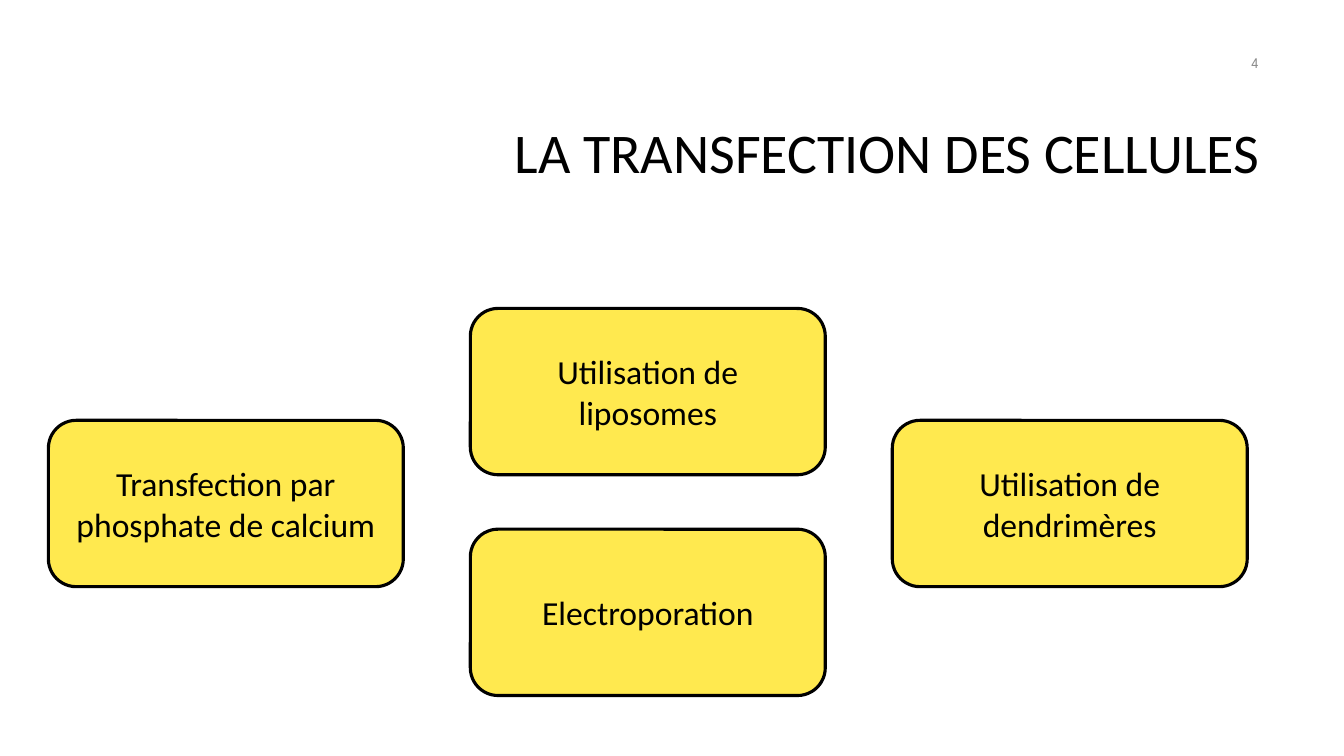
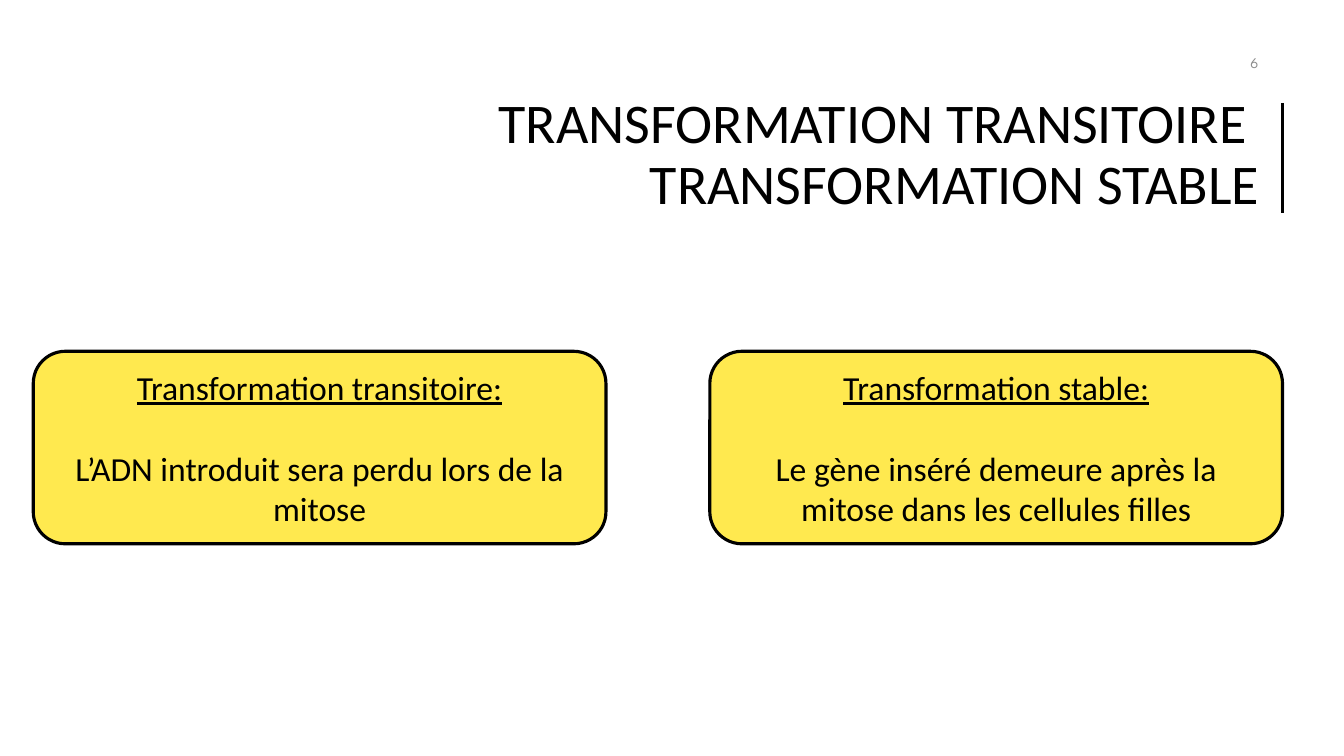
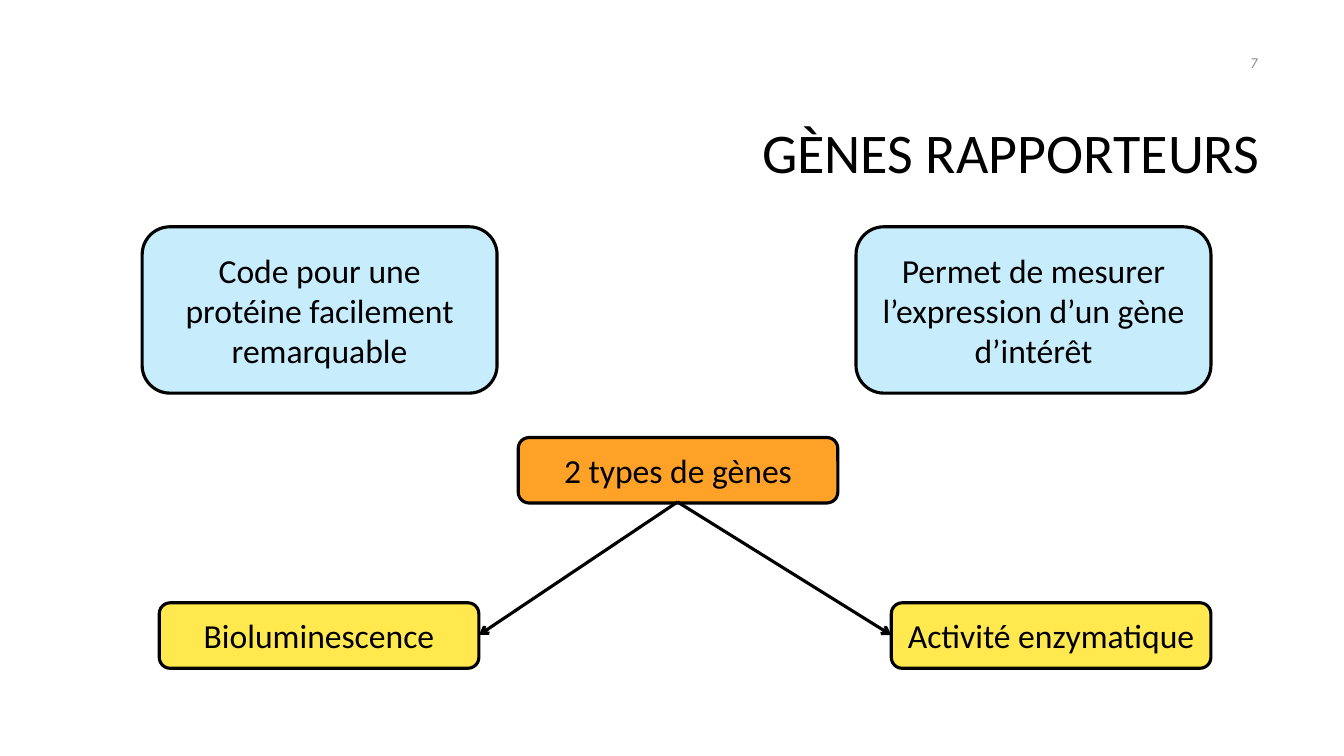
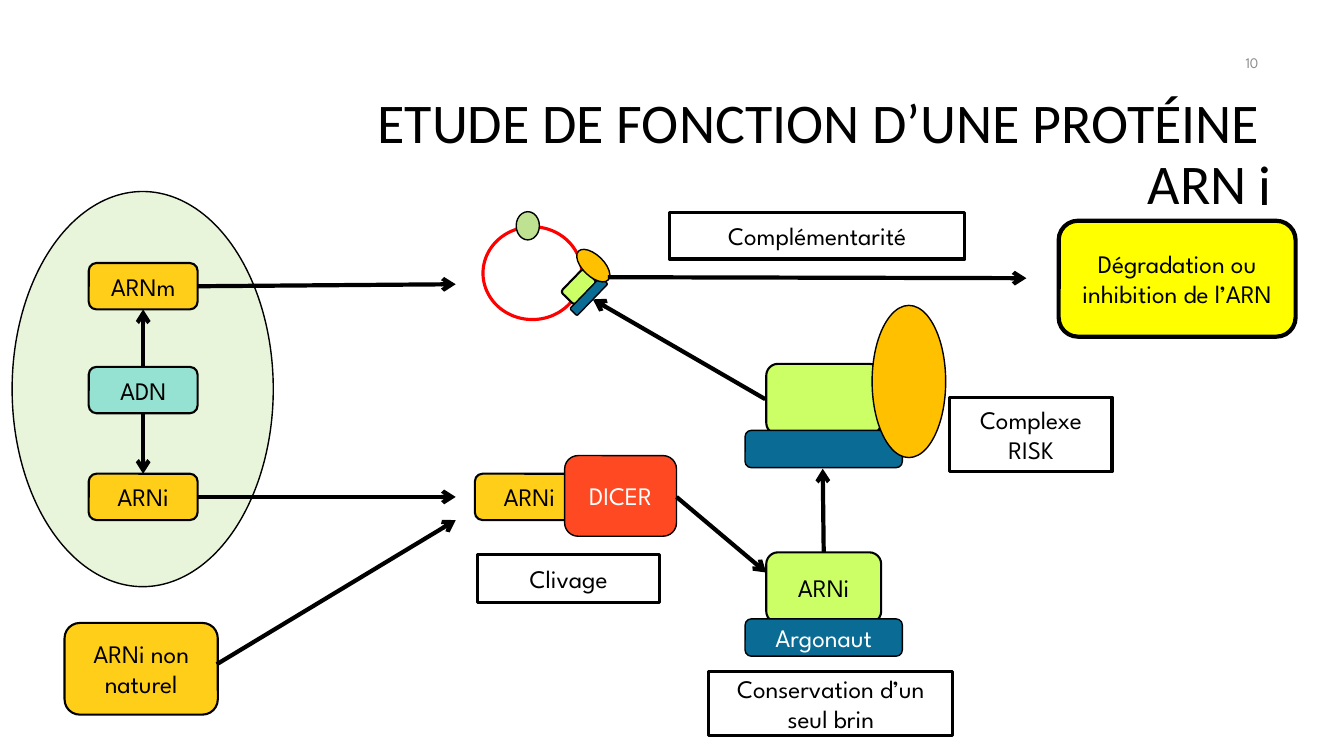
from lxml import etree
from pptx import Presentation
from pptx.dml.color import RGBColor
from pptx.enum.shapes import MSO_CONNECTOR, MSO_SHAPE
from pptx.enum.text import MSO_ANCHOR, MSO_AUTO_SIZE, PP_ALIGN
from pptx.oxml.ns import qn
from pptx.util import Inches, Pt

ROUNDED, RECTANGLE, OVAL = MSO_SHAPE.ROUNDED_RECTANGLE, MSO_SHAPE.RECTANGLE, MSO_SHAPE.OVAL
LEFT, CENTER, RIGHT = PP_ALIGN.LEFT, PP_ALIGN.CENTER, PP_ALIGN.RIGHT
TOP, MIDDLE = MSO_ANCHOR.TOP, MSO_ANCHOR.MIDDLE
STRAIGHT = MSO_CONNECTOR.STRAIGHT

# Grid of square cells: 133.3 columns by 75 rows
CELL = Inches(0.1)
COLUMNS, ROWS = 133.3, 75
TITLE_FRAME = (31.7, 8.4, 94.2, 14.1)
NUMBER_FRAME = (95.8, 4.2, 30, 4)

BODY_FONT, LABEL_FONT = "Calibri", "League Spartan"
COLORS = {
    "black": "000000", "white": "FFFFFF", "grey": "8C8C8C", "red": "FF0000",
    "yellow": "FFE94F", "sky": "C7ECFB", "orange": "FFA227",
    "nucleus": "E9F5DB", "leaf": "BEE292", "mint": "96E2D2", "gold": "FFCE19",
    "vermilion": "FF4922", "lime": "CCFF66", "blue": "0A6B94",
    "amber": "FFC000", "bright": "FFFF00",
}


def write_text(frame, text, font=BODY_FONT, size=24, color="black", align=CENTER,
               anchor=MIDDLE, spacing=None, gap=0, underline_first=False):
    """Write one paragraph per line of text."""
    frame.word_wrap = True
    frame.auto_size = MSO_AUTO_SIZE.NONE
    frame.vertical_anchor = anchor
    for index, line in enumerate(text.split("\n")):
        paragraph = frame.add_paragraph() if index else frame.paragraphs[0]
        paragraph.alignment = align
        if spacing:
            paragraph.line_spacing = spacing
        if index and gap:
            paragraph.space_before = Pt(gap)
        run = paragraph.add_run()
        run.text = line
        run.font.name = font
        run.font.size = Pt(size)
        run.font.color.rgb = RGBColor.from_string(COLORS[color])
        if underline_first and index == 0:
            run.font.underline = True


def add_box(slide, kind, frame, fill, text="", weight=2.25, outline="black",
            rotation=0, **text_format):
    """Add an outlined shape, with its frame given in cells."""
    shape = slide.shapes.add_shape(kind, *[int(value * CELL) for value in frame])
    shape.shadow.inherit = False
    shape.fill.solid()
    shape.fill.fore_color.rgb = RGBColor.from_string(COLORS[fill])
    shape.line.color.rgb = RGBColor.from_string(COLORS[outline])
    shape.line.width = Pt(weight)
    shape.rotation = rotation
    if text:
        write_text(shape.text_frame, text, **text_format)


presentation = Presentation()
presentation.slide_width = int(COLUMNS * CELL)
presentation.slide_height = int(ROWS * CELL)

# Titles and slide numbers
slides = []
for number, title in [
    ("4", "LA TRANSFECTION DES CELLULES"),
    ("6", "TRANSFORMATION TRANSITOIRE \nTRANSFORMATION STABLE"),
    ("7", "GÈNES RAPPORTEURS"),
    ("10", "ETUDE DE FONCTION D’UNE PROTÉINE\nARN "),
]:
    slide = presentation.slides.add_slide(presentation.slide_layouts[5])
    placeholder = slide.shapes.title
    placeholder.left, placeholder.top, placeholder.width, placeholder.height = [
        int(value * CELL) for value in TITLE_FRAME]
    write_text(placeholder.text_frame, title, size=40, align=RIGHT, spacing=0.9)
    number_box = slide.shapes.add_textbox(*[int(value * CELL) for value in NUMBER_FRAME])
    write_text(number_box.text_frame, number, font=LABEL_FONT, size=10.5,
               color="grey", align=RIGHT)
    slides.append(slide)
transfection, transformation, reporters, interference = slides

# Transfection: three columns of methods
for column, top, text in [
    (0, 41.7, "Transfection par phosphate de calcium"),
    (1, 30.6, "Utilisation de liposomes"),
    (2, 41.7, "Utilisation de dendrimères"),
    (1, 52.5, "Electroporation"),
]:
    add_box(transfection, ROUNDED, (4.8 + 41.85 * column, top, 35.2, 16.5), "yellow", text)

# Transformation: two definitions
for left, text in [
    (3.3, "Transformation transitoire:\nL’ADN introduit sera perdu lors de la mitose"),
    (70.4, "Transformation stable:\nLe gène inséré demeure après la mitose dans les cellules filles"),
]:
    add_box(transformation, ROUNDED, (left, 34.85, 56.8, 19.1), "yellow", text,
            gap=29, underline_first=True)

# Reporter genes: two properties, then two types
for left, text in [
    (14.1, "Code pour une protéine facilement remarquable"),
    (84.9, "Permet de mesurer l’expression d’un gène d’intérêt"),
]:
    add_box(reporters, ROUNDED, (left, 22.5, 35.2, 16.5), "sky", text)
for left, top, fill, text in [
    (51.4, 43.4, "orange", "2 types de gènes"),
    (88.4, 59.8, "yellow", "Activité enzymatique"),
    (15.8, 59.8, "yellow", "Bioluminescence"),
]:
    add_box(reporters, ROUNDED, (left, top, 31.7, 6.5), fill, text)

# Interference: lower-case end of the title
letter_box = interference.shapes.add_textbox(
    *[int(value * CELL) for value in (123.8, 14.3, 5.3, 7.7)])
write_text(letter_box.text_frame, "i", size=40, align=LEFT, anchor=TOP)

# Interference: nucleus and messenger ring
add_box(interference, OVAL, (1.2, 19, 25.9, 39.2), "nucleus", weight=1)
add_box(interference, OVAL, (47.9, 22.5, 9.8, 9.2), "white", outline="red")
add_box(interference, OVAL, (51.2, 21, 2.3, 2.8), "leaf", weight=1)

# Interference: molecules
for frame, fill, text, weight, color in [
    ((8.8, 26.1, 10.8, 4.6), "gold", "ARNm", 1.5, "black"),
    ((8.8, 36.4, 10.8, 4.6), "mint", "ADN", 1.5, "black"),
    ((8.8, 47, 10.8, 4.6), "gold", "ARNi", 1.5, "black"),
    ((6.4, 61.8, 15.2, 9.1), "gold", "ARNi non naturel", 1.5, "black"),
    ((47.1, 47, 10.8, 4.6), "gold", "ARNi", 1.5, "black"),
    ((56, 45.2, 11.1, 8), "vermilion", "DICER", 1, "white"),
    ((105, 21.9, 23.5, 11.5), "bright", "Dégradation ou inhibition de l’ARN", 3, "black"),
]:
    add_box(interference, ROUNDED, frame, fill, text, weight=weight,
            font=LABEL_FONT, size=18, color=color)

# Interference: strand on its carrier, alone and then in the complex
for top, strand, carrier in [(54.8, "ARNi", "Argonaut"), (36.1, "", "")]:
    add_box(interference, ROUNDED, (76, top, 11.4, 7), "lime", strand, weight=1.5,
            font=LABEL_FONT, size=18)
    add_box(interference, ROUNDED, (73.9, top + 6.6, 15.6, 3.7), "blue", carrier, weight=1,
            font=LABEL_FONT, size=18, color="white")
add_box(interference, OVAL, (86.5, 30.3, 7.3, 15.1), "amber", weight=1)

# Interference: small complex bound to the ring
for kind, frame, fill, weight in [
    (ROUNDED, (55.8, 27.5, 3.2, 1.9), "lime", 1.5),
    (ROUNDED, (56.2, 28.9, 4.4, 1), "blue", 1),
    (OVAL, (57.8, 24.3, 2.1, 4.1), "amber", 1),
]:
    add_box(interference, kind, frame, fill, weight=weight, rotation=314.1)

# Interference: step labels
for frame, text in [
    ((47.4, 55, 18, 4.8), "Clivage"),
    ((70.3, 66.6, 24.2, 6.4), "Conservation d’un seul brin"),
    ((94.2, 39.4, 16.1, 7.4), "Complexe RISK"),
    ((66.4, 21.1, 29.3, 4.6), "Complémentarité"),
]:
    add_box(interference, RECTANGLE, frame, "white", text, font=LABEL_FONT, size=18)

# Lines and arrows: start and end points in cells
for slide, weight, has_head, segments in [
    (transformation, 2.25, False, [(127.2, 10.2, 127.2, 21.1)]),
    (reporters, 2.25, True, [(67.2, 49.8, 88.4, 63), (67.2, 49.8, 47.5, 63)]),
    (interference, 3, True, [
        (14.2, 36.4, 14.2, 30.7),
        (14.2, 41, 14.2, 47),
        (18.6 + 1, 28.4, 45.2, 28.2),
        (19.5, 49.3, 45.2, 49.3),
        (21.5, 65.9, 45.2, 51.6),
        (67.1, 49.3, 76, 56.8),
        (81.7, 54.8, 81.6, 46.5),
        (75.9, 39.6, 58.8, 29.7),
        (60.3, 27.5, 101.8, 27.6),
    ]),
]:
    for segment in segments:
        connector = slide.shapes.add_connector(
            STRAIGHT, *[int(value * CELL) for value in segment])
        connector.line.color.rgb = RGBColor.from_string(COLORS["black"])
        connector.line.width = Pt(weight)
        properties = connector.element.spPr
        if has_head:
            etree.SubElement(properties.find(qn("a:ln")), qn("a:tailEnd"), type="arrow")
        etree.SubElement(properties, qn("a:effectLst"))

presentation.save("out.pptx")
